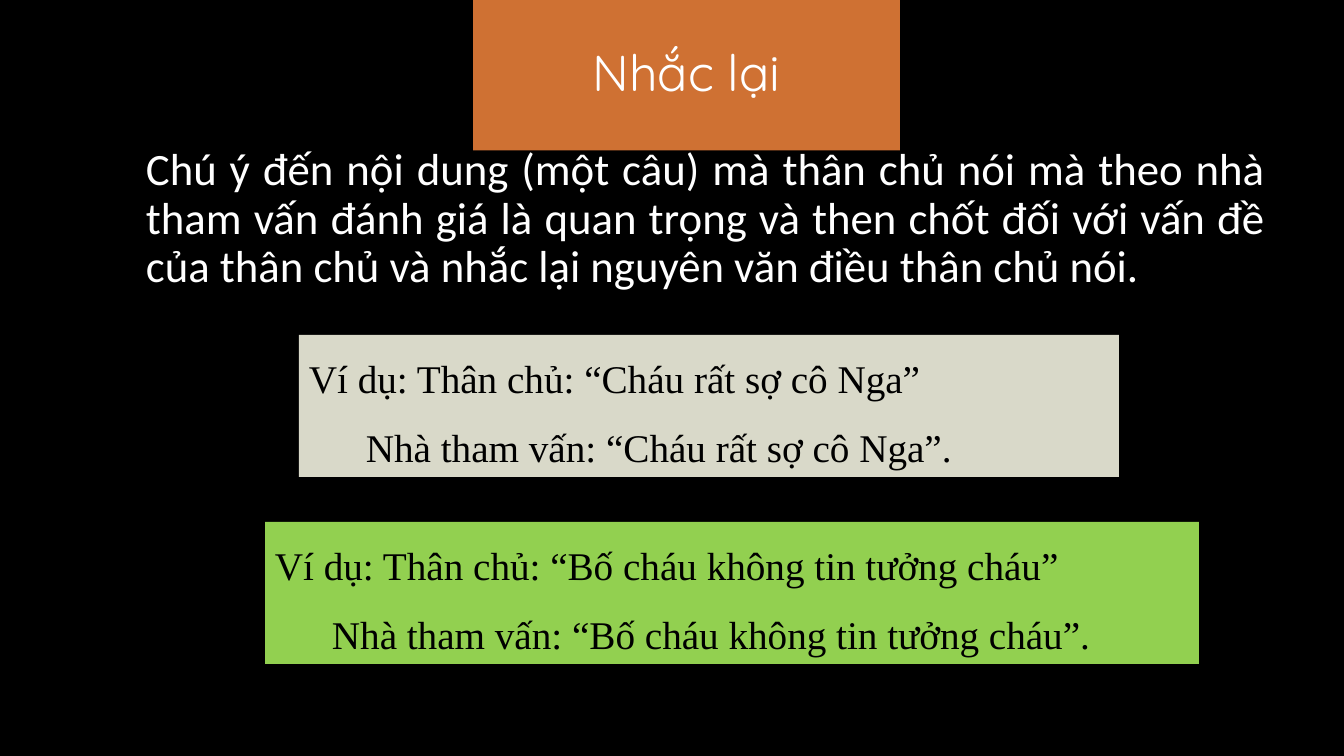
from pptx import Presentation
from pptx.dml.color import RGBColor
from pptx.enum.text import MSO_ANCHOR, MSO_AUTO_SIZE, PP_ALIGN
from pptx.enum.shapes import MSO_SHAPE
from pptx.util import Pt

SLIDE_W, SLIDE_H = 1344, 756
EMU_PER_PX = 12192000 / SLIDE_W

BLACK = RGBColor(0x00, 0x00, 0x00)
WHITE = RGBColor(0xFF, 0xFF, 0xFF)
ORANGE = RGBColor(0xCF, 0x71, 0x33)
STONE = RGBColor(0xD9, 0xD9, 0xC9)
GREEN = RGBColor(0x92, 0xD0, 0x50)

REPLY_INDENT = 57


def px(length):
    return round(length * EMU_PER_PX)


def fill_solid(area, color):
    area.fill.solid()
    area.fill.fore_color.rgb = color


def prepare_frame(frame, anchor):
    frame.word_wrap = True
    frame.auto_size = MSO_AUTO_SIZE.SHAPE_TO_FIT_TEXT
    frame.vertical_anchor = anchor


def write(paragraph, text, font, size, color, align):
    paragraph.alignment = align
    run = paragraph.add_run()
    run.text = text
    run.font.name = font
    run.font.size = Pt(size)
    run.font.color.rgb = color


def place_heading(slide, box, text):
    heading = slide.shapes.title
    heading.left, heading.top, heading.width, heading.height = map(px, box)
    fill_solid(heading, ORANGE)
    prepare_frame(heading.text_frame, MSO_ANCHOR.MIDDLE)
    write(heading.text_frame.paragraphs[0], text, "Quicksand", 36, WHITE, PP_ALIGN.CENTER)


def place_definition(slide, box, text):
    definition = slide.shapes.add_textbox(*map(px, box))
    prepare_frame(definition.text_frame, MSO_ANCHOR.TOP)
    paragraph = definition.text_frame.paragraphs[0]
    paragraph.line_spacing = 0.9
    paragraph.space_before = Pt(10)
    write(paragraph, text, "Calibri", 32, WHITE, PP_ALIGN.JUSTIFY)


def place_example(slide, box, color, quote):
    example = slide.shapes.add_shape(MSO_SHAPE.RECTANGLE, *map(px, box))
    example.shadow.inherit = False
    example.line.fill.background()
    fill_solid(example, color)
    frame = example.text_frame
    prepare_frame(frame, MSO_ANCHOR.TOP)
    client, counsellor = frame.paragraphs[0], frame.add_paragraph()
    for paragraph, text in (
        (client, f"Ví dụ: Thân chủ: “{quote}”"),
        (counsellor, f"Nhà tham vấn: “{quote}”."),
    ):
        paragraph.line_spacing = 1.3
        paragraph.space_before = paragraph.space_after = Pt(3)
        write(paragraph, text, "Times New Roman", 28, BLACK, PP_ALIGN.JUSTIFY)
    counsellor._p.get_or_add_pPr().set("indent", str(px(REPLY_INDENT)))


def build_repeating_slide(deck):
    slide = deck.slides.add_slide(deck.slide_layouts[5])
    fill_solid(slide.background, BLACK)
    place_heading(slide, (473, 36, 427, 71), "Nhắc lại")
    place_definition(
        slide,
        (136, 142, 1140, 157),
        "Chú ý đến nội dung (một câu) mà thân chủ nói mà theo nhà tham vấn "
        "đánh giá là quan trọng và then chốt đối với vấn đề của thân chủ "
        "và nhắc lại nguyên văn điều thân chủ nói.",
    )
    place_example(slide, (299, 335, 820, 142), STONE, "Cháu rất sợ cô Nga")
    place_example(slide, (265, 522, 934, 142), GREEN, "Bố cháu không tin tưởng cháu")


def main():
    deck = Presentation()
    deck.slide_width, deck.slide_height = px(SLIDE_W), px(SLIDE_H)
    build_repeating_slide(deck)
    deck.save("out.pptx")


if __name__ == "__main__":
    main()
